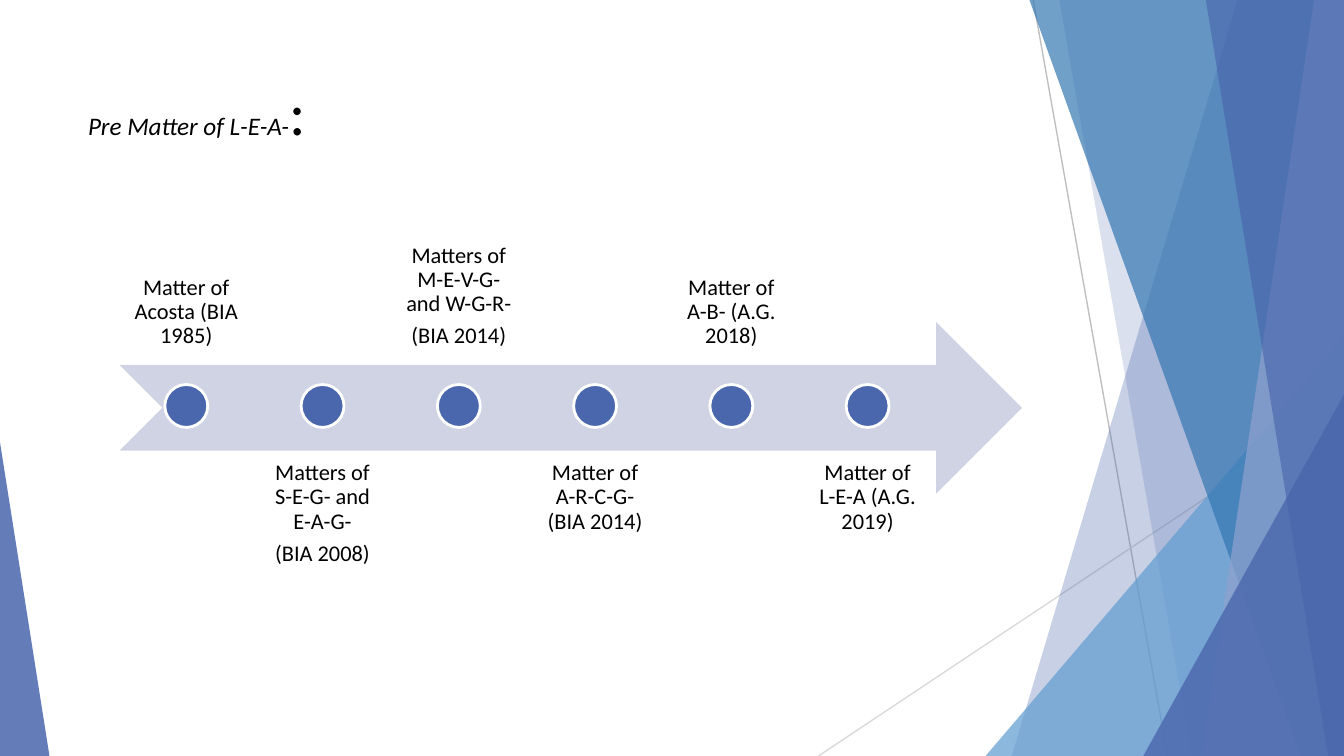
from lxml import etree
from pptx import Presentation
from pptx.dml.color import RGBColor
from pptx.enum.shapes import MSO_CONNECTOR, MSO_SHAPE
from pptx.enum.text import MSO_ANCHOR, MSO_AUTO_SIZE, PP_ALIGN
from pptx.oxml.ns import qn
from pptx.util import Pt

STRAIGHT = MSO_CONNECTOR.STRAIGHT
TRIANGLE = MSO_SHAPE.ISOSCELES_TRIANGLE
ARROW = MSO_SHAPE.NOTCHED_RIGHT_ARROW
OVAL = MSO_SHAPE.OVAL
TOP, BOTTOM = MSO_ANCHOR.TOP, MSO_ANCHOR.BOTTOM
LEFT, CENTER = PP_ALIGN.LEFT, PP_ALIGN.CENTER
NO_AUTOFIT = MSO_AUTO_SIZE.NONE

WIDTH, HEIGHT = 720, 405
EVENT_LEFT, EVENT_STEP = 64.8, 73
EVENT_WIDTH, EVENT_HEIGHT = 70, 92
ABOVE_TOP, BELOW_TOP = 101.5, 240.5
DOT_SIZE, DOT_TOP = 23, 206
BLUE = "4A66AC"

EVENTS = [
    ["Matter of Acosta (BIA 1985)"],
    ["Matters of S-E-G- and E-A-G-", "(BIA 2008)"],
    ["Matters of M-E-V-G- and W-G-R-", "(BIA 2014)"],
    ["Matter of A-R-C-G- (BIA 2014)"],
    ["Matter of A-B- (A.G. 2018)"],
    ["Matter of L-E-A (A.G. 2019)"],
]


def color(value):
    return RGBColor.from_string(value)


class Timeline:
    font = "Calibri"
    ink = "000000"

    def __init__(self, page):
        self.page = page

    def paint(self, shape, fill, opacity=100, outline=None):
        shape.shadow.inherit = False
        shape.fill.solid()
        shape.fill.fore_color.rgb = color(fill)
        if opacity < 100:
            tint = shape.fill._xPr.find(qn("a:solidFill"))[0]
            etree.SubElement(tint, qn("a:alpha"), val=str(opacity * 1000))
        if outline:
            shape.line.color.rgb = color(outline)
            shape.line.width = Pt(1.5)
        else:
            shape.line.fill.background()

    def shape(self, kind, left, top, width, height, fill, opacity=100, outline=None):
        shape = self.page.shapes.add_shape(kind, Pt(left), Pt(top), Pt(width), Pt(height))
        self.paint(shape, fill, opacity, outline)
        return shape

    def line(self, start, end, stroke):
        line = self.page.shapes.add_connector(
            STRAIGHT, Pt(start[0]), Pt(start[1]), Pt(end[0]), Pt(end[1]))
        line.line.color.rgb = color(stroke)
        line.line.width = Pt(0.75)
        etree.SubElement(line._element.spPr, qn("a:effectLst"))

    def band(self, top_x, bottom_x, fill, opacity):
        builder = self.page.shapes.build_freeform(Pt(top_x), 0)
        corners = [(WIDTH, 0), (WIDTH, HEIGHT), (bottom_x, HEIGHT)]
        builder.add_line_segments([(Pt(x), Pt(y)) for x, y in corners], close=True)
        self.paint(builder.convert_to_shape(), fill, opacity)

    def corner(self, left, width, height, apex, fill, opacity):
        triangle = self.shape(TRIANGLE, left, HEIGHT - height, width, height, fill, opacity)
        triangle.adjustments[0] = apex

    def span(self, para, text, size, italic=False):
        span = para.add_run()
        span.text = text
        span.font.name = self.font
        span.font.size = Pt(size)
        span.font.italic = italic
        span.font.color.rgb = color(self.ink)

    def title(self, left, top, width, height, spans):
        box = self.page.shapes.title
        box.left, box.top, box.width, box.height = Pt(left), Pt(top), Pt(width), Pt(height)
        frame = box.text_frame
        frame.auto_size = NO_AUTOFIT
        frame.vertical_anchor = TOP
        para = frame.paragraphs[0]
        para.alignment = LEFT
        for text, size, italic in spans:
            self.span(para, text, size, italic)

    def label(self, left, top, anchor, lines):
        box = self.page.shapes.add_textbox(Pt(left), Pt(top), Pt(EVENT_WIDTH), Pt(EVENT_HEIGHT))
        frame = box.text_frame
        frame.word_wrap = True
        frame.vertical_anchor = anchor
        frame.margin_left = frame.margin_right = Pt(6.7)
        frame.margin_top = frame.margin_bottom = Pt(6.7)
        for index, text in enumerate(lines):
            para = frame.add_paragraph() if index else frame.paragraphs[0]
            para.alignment = CENTER
            para.line_spacing = 0.9
            para.space_after = Pt(4.2)
            self.span(para, text, 12)

    def event(self, index, lines):
        left = EVENT_LEFT + index * EVENT_STEP
        if index % 2:
            self.label(left, BELOW_TOP, TOP, lines)
        else:
            self.label(left, ABOVE_TOP, BOTTOM, lines)
        self.shape(OVAL, left + (EVENT_WIDTH - DOT_SIZE) / 2, DOT_TOP,
                   DOT_SIZE, DOT_SIZE, BLUE, outline="FFFFFF")


def main():
    deck = Presentation()
    deck.slide_width, deck.slide_height = Pt(WIDTH), Pt(HEIGHT)
    timeline = Timeline(deck.slides.add_slide(deck.slide_layouts[5]))

    timeline.line((553.5, 0), (625.5, HEIGHT), "BFBFBF")
    timeline.line((WIDTH, 217.5), (438.5, HEIGHT), "D9D9D9")
    timeline.band(663, 542, BLUE, 30)
    timeline.band(567.5, 638.5, BLUE, 20)
    timeline.corner(528, 192, 225, 1, "629DD1", 72)
    timeline.band(551.5, 697, "3477B2", 70)
    timeline.band(704, 643.5, "90A2CF", 70)
    timeline.band(646, 711.5, BLUE, 65)
    timeline.corner(612.5, 107.5, 193.5, 1, BLUE, 80)
    timeline.corner(0, 26.5, 168, 0, BLUE, 85)

    timeline.title(40, 36, 508, 78, [("Pre Matter of L-E-A-", 13.5, True), (":", 33, False)])
    timeline.shape(ARROW, 64, 172.5, 483.5, 92, "D0D3E3")
    for index, lines in enumerate(EVENTS):
        timeline.event(index, lines)

    deck.save("out.pptx")


if __name__ == "__main__":
    main()
